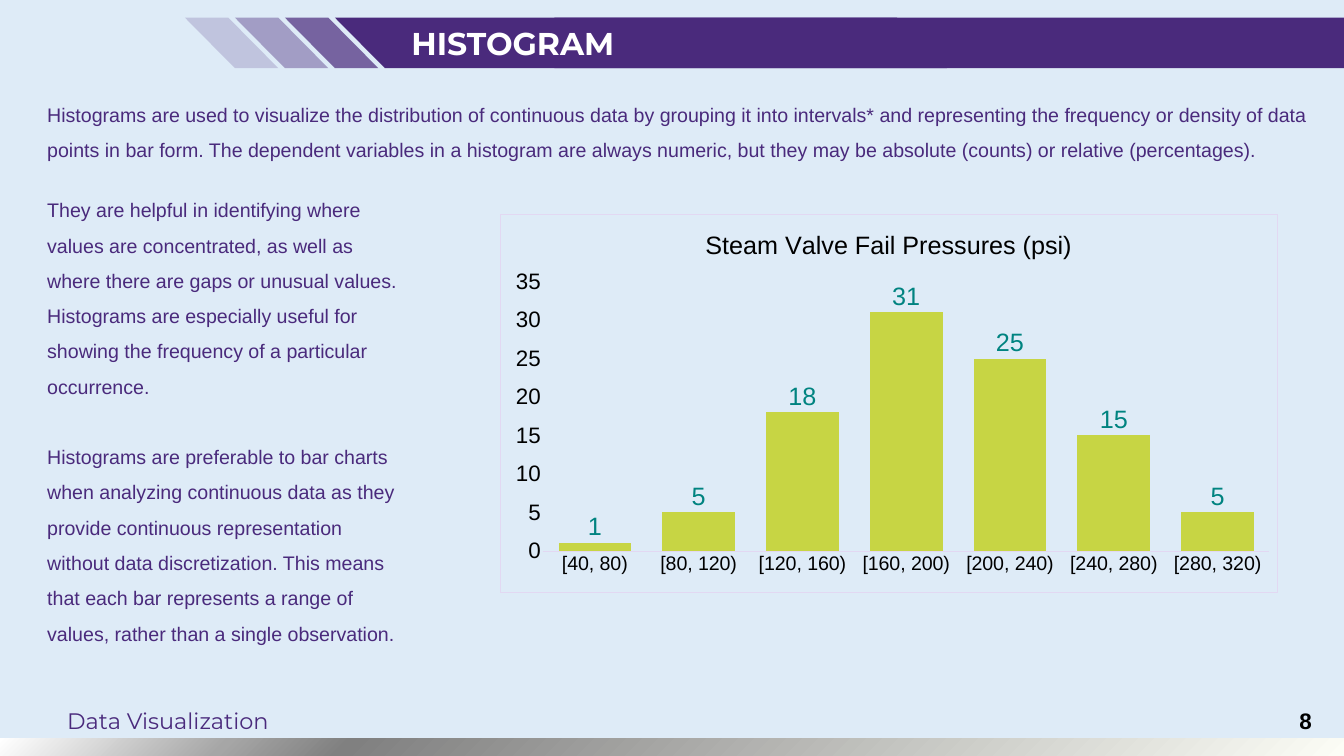
"""Build the histogram slide of a data visualization course."""
from dataclasses import dataclass

from lxml.etree import SubElement
from pptx import Presentation
from pptx.chart.data import CategoryChartData
from pptx.dml.color import RGBColor as Rgb
from pptx.enum.chart import XL_AXIS_CROSSES as Crosses
from pptx.enum.chart import XL_CHART_TYPE as ChartType
from pptx.enum.chart import XL_LABEL_POSITION as LabelPosition
from pptx.enum.chart import XL_TICK_MARK as TickMark
from pptx.enum.shapes import MSO_SHAPE as Preset
from pptx.enum.text import MSO_ANCHOR as Anchor
from pptx.enum.text import MSO_AUTO_SIZE as AutoSize
from pptx.enum.text import PP_ALIGN as Align
from pptx.oxml import parse_xml
from pptx.oxml.ns import nsdecls, qn
from pptx.util import Cm, Pt


@dataclass(frozen=True)
class Theme:
    background: str = "DEEBF7"
    purple: str = "4A2A7C"
    white: str = "FFFFFF"
    black: str = "000000"
    bar: str = "C7D544"
    value: str = "008380"
    outline: str = "E2D8F2"
    body_font: str = "Arial"
    display_font: str = "Montserrat"
    title_size: int = 45
    chart_size: int = 36
    footer_size: int = 32
    body_size: int = 28


THEME = Theme()
TITLE = "HISTOGRAM"
COURSE = "Data Visualization"
PAGE = "8"
INTRO = [
    "Histograms are used to visualize the distribution of continuous data by grouping it into "
    "intervals* and representing the frequency or density of data points in bar form. The "
    "dependent variables in a histogram are always numeric, but they may be absolute (counts) "
    "or relative (percentages).",
]
USES = [
    "They are helpful in identifying where values are concentrated, as well as where there are "
    "gaps or unusual values. Histograms are especially useful for showing the frequency of a "
    "particular occurrence.",
    "Histograms are preferable to bar charts when analyzing continuous data as they provide "
    "continuous representation without data discretization. This means that each bar represents "
    "a range of values, rather than a single observation.",
]
CHART_TITLE = "Steam Valve Fail Pressures (psi)"
COUNTS = [1, 5, 18, 31, 25, 15, 5]
BIN_START, BIN_WIDTH = 40, 40
PLOT_AREA = {"x": 0.055, "y": 0.179, "w": 0.935, "h": 0.712}
STRIPE_OPACITIES = [20, 40, 70]
FOOTER_GRADIENT = [(0, "FCFDF6"), (74, "808080"), (83, "A6A6A6"), (100, "FFFFFF")]

SLIDE_WIDTH, SLIDE_HEIGHT = 67.74, 38.1
BANNER_TOP, BANNER_HEIGHT = 0.89, 2.54
STRIPE_LEFT, STRIPE_STEP, STRIPE_WIDTH = 9.32, 2.52, 4.7
BANNER_WIDTH, BAND_LEFT = 30.84, 27.94


def style(font, size, color, name=THEME.body_font, bold=False):
    font.size, font.name, font.bold = Pt(size), name, bold
    font.color.rgb = Rgb.from_string(color)


def add_block(slide, preset, left, top, width, height, color=THEME.purple):
    shape = slide.shapes.add_shape(preset, Cm(left), Cm(top), Cm(width), Cm(height))
    shape.shadow.inherit = False
    shape.fill.solid()
    shape.fill.fore_color.rgb = Rgb.from_string(color)
    shape.line.fill.background()
    return shape


def add_stripe(slide, left, width, opacity=100):
    shape = add_block(slide, Preset.PARALLELOGRAM, left, BANNER_TOP, width, BANNER_HEIGHT)
    shape.adjustments[0] = 0.99
    shape._element.spPr.find(qn("a:xfrm")).set("flipV", "1")
    if opacity < 100:
        color = shape._element.spPr.find(qn("a:solidFill")).find(qn("a:srgbClr"))
        SubElement(color, qn("a:alpha")).set("val", str(opacity * 1000))


def add_footer_bar(slide):
    height = 0.89
    bar = add_block(slide, Preset.RECTANGLE, 0, SLIDE_HEIGHT - height, SLIDE_WIDTH, height)
    stops = "".join(
        f'<a:gs pos="{position * 1000}"><a:srgbClr val="{color}"/></a:gs>'
        for position, color in FOOTER_GRADIENT
    )
    gradient = parse_xml(
        f'<a:gradFill {nsdecls("a")} rotWithShape="1"><a:gsLst>{stops}</a:gsLst>'
        '<a:path path="circle"><a:fillToRect l="100000" t="100000"/></a:path></a:gradFill>'
    )
    properties = bar._element.spPr
    properties.replace(properties.find(qn("a:solidFill")), gradient)


def add_banner(slide):
    add_stripe(slide, STRIPE_LEFT + len(STRIPE_OPACITIES) * STRIPE_STEP, BANNER_WIDTH)
    for index, opacity in enumerate(STRIPE_OPACITIES):
        add_stripe(slide, STRIPE_LEFT + index * STRIPE_STEP, STRIPE_WIDTH, opacity)
    add_block(slide, Preset.RECTANGLE, BAND_LEFT, BANNER_TOP,
              SLIDE_WIDTH - BAND_LEFT, BANNER_HEIGHT)


def set_margins(frame):
    frame.margin_left = frame.margin_right = Cm(0.61)
    frame.margin_top = frame.margin_bottom = Cm(0.3)


def place_title(slide):
    title = slide.shapes.title
    slide.shapes._spTree.append(title._element)
    title.left, title.top, title.width, title.height = Cm(20.12), Cm(0.89), Cm(45.52), Cm(2.41)
    frame = title.text_frame
    frame.text = TITLE
    frame.auto_size, frame.vertical_anchor = AutoSize.NONE, Anchor.TOP
    set_margins(frame)
    paragraph = frame.paragraphs[0]
    paragraph.alignment = Align.LEFT
    style(paragraph.font, THEME.title_size, THEME.white, THEME.display_font, True)


def add_text(slide, left, top, width, height):
    frame = slide.shapes.add_textbox(Cm(left), Cm(top), Cm(width), Cm(height)).text_frame
    frame.word_wrap = True
    return frame


def add_body(slide, texts, *box):
    frame = add_text(slide, *box)
    frame.text = "\n".join(texts)
    for index, paragraph in enumerate(frame.paragraphs):
        paragraph.line_spacing = 1.5
        paragraph.space_before = Pt(50 if index else 0)
        style(paragraph.font, THEME.body_size, THEME.purple)


def add_footer(slide, text, left, width, align, *look):
    frame = add_text(slide, left, 35.28, width, 2.03)
    frame.text, frame.vertical_anchor = text, Anchor.MIDDLE
    set_margins(frame)
    frame.paragraphs[0].alignment = align
    style(frame.paragraphs[0].font, THEME.footer_size, *look)


def frame_chart(chart):
    space = chart._chartSpace
    space.find(qn("c:chart")).addnext(parse_xml(
        f'<c:spPr {nsdecls("c", "a")}><a:solidFill><a:srgbClr val="{THEME.background}"/>'
        f'</a:solidFill><a:ln w="{Pt(0.75)}"><a:solidFill><a:srgbClr val="{THEME.outline}"/>'
        '</a:solidFill></a:ln></c:spPr>'
    ))
    plot_area = space.find(qn("c:chart")).find(qn("c:plotArea"))
    for layout in plot_area.findall(qn("c:layout")):
        plot_area.remove(layout)
    modes = '<c:xMode val="edge"/><c:yMode val="edge"/>'
    sizes = "".join(f'<c:{side} val="{share}"/>' for side, share in PLOT_AREA.items())
    plot_area.insert(0, parse_xml(
        f'<c:layout {nsdecls("c")}><c:manualLayout><c:layoutTarget val="inner"/>'
        f'{modes}{sizes}</c:manualLayout></c:layout>'
    ))


def add_histogram(slide):
    data = CategoryChartData()
    starts = [BIN_START + index * BIN_WIDTH for index in range(len(COUNTS))]
    data.categories = [f"[{start}, {start + BIN_WIDTH})" for start in starts]
    data.add_series("Series 1", COUNTS)
    chart = slide.shapes.add_chart(ChartType.COLUMN_CLUSTERED, Cm(25.2), Cm(10.77),
                                   Cm(39.19), Cm(19.08), data).chart
    style(chart.font, 10, THEME.purple)
    chart.has_legend = False
    chart.chart_title.text_frame.text = CHART_TITLE
    style(chart.chart_title.text_frame.paragraphs[0].font, THEME.chart_size, THEME.black)
    chart.chart_title.include_in_layout = False

    plot = chart.plots[0]
    plot.gap_width, plot.overlap, plot.vary_by_categories = 43, -27, False
    fill = plot.series[0].format.fill
    fill.solid()
    fill.fore_color.rgb = Rgb.from_string(THEME.bar)
    plot.has_data_labels = True
    labels = plot.data_labels
    labels.show_value, labels.position = True, LabelPosition.OUTSIDE_END
    style(labels.font, THEME.chart_size, THEME.value)

    bins, counts = chart.category_axis, chart.value_axis
    for axis, size in ((bins, THEME.body_size), (counts, THEME.footer_size)):
        axis.major_tick_mark = axis.minor_tick_mark = TickMark.NONE
        axis.has_major_gridlines = False
        style(axis.tick_labels.font, size, THEME.black)
    bins.crosses = Crosses.MAXIMUM
    bins.format.line.width = Pt(0.75)
    bins.format.line.color.rgb = Rgb.from_string(THEME.outline)
    counts.minimum_scale, counts.maximum_scale, counts.major_unit = 0, 35, 5
    counts.format.line.fill.background()
    frame_chart(chart)


def main():
    presentation = Presentation()
    presentation.slide_width, presentation.slide_height = Cm(SLIDE_WIDTH), Cm(SLIDE_HEIGHT)
    slide = presentation.slides.add_slide(presentation.slide_layouts[5])
    slide.background.fill.solid()
    slide.background.fill.fore_color.rgb = Rgb.from_string(THEME.background)
    add_footer_bar(slide)
    add_banner(slide)
    place_title(slide)
    add_footer(slide, PAGE, 53.67, 13.06, Align.RIGHT, THEME.black, THEME.body_font, True)
    add_body(slide, INTRO, 2.13, 4.47, 64.59, 3.63)
    add_footer(slide, COURSE, 2.77, 49.96, Align.LEFT, THEME.purple, THEME.display_font)
    add_body(slide, USES, 2.13, 9.27, 18.62, 23.37)
    add_histogram(slide)
    presentation.save("out.pptx")


if __name__ == "__main__":
    main()
